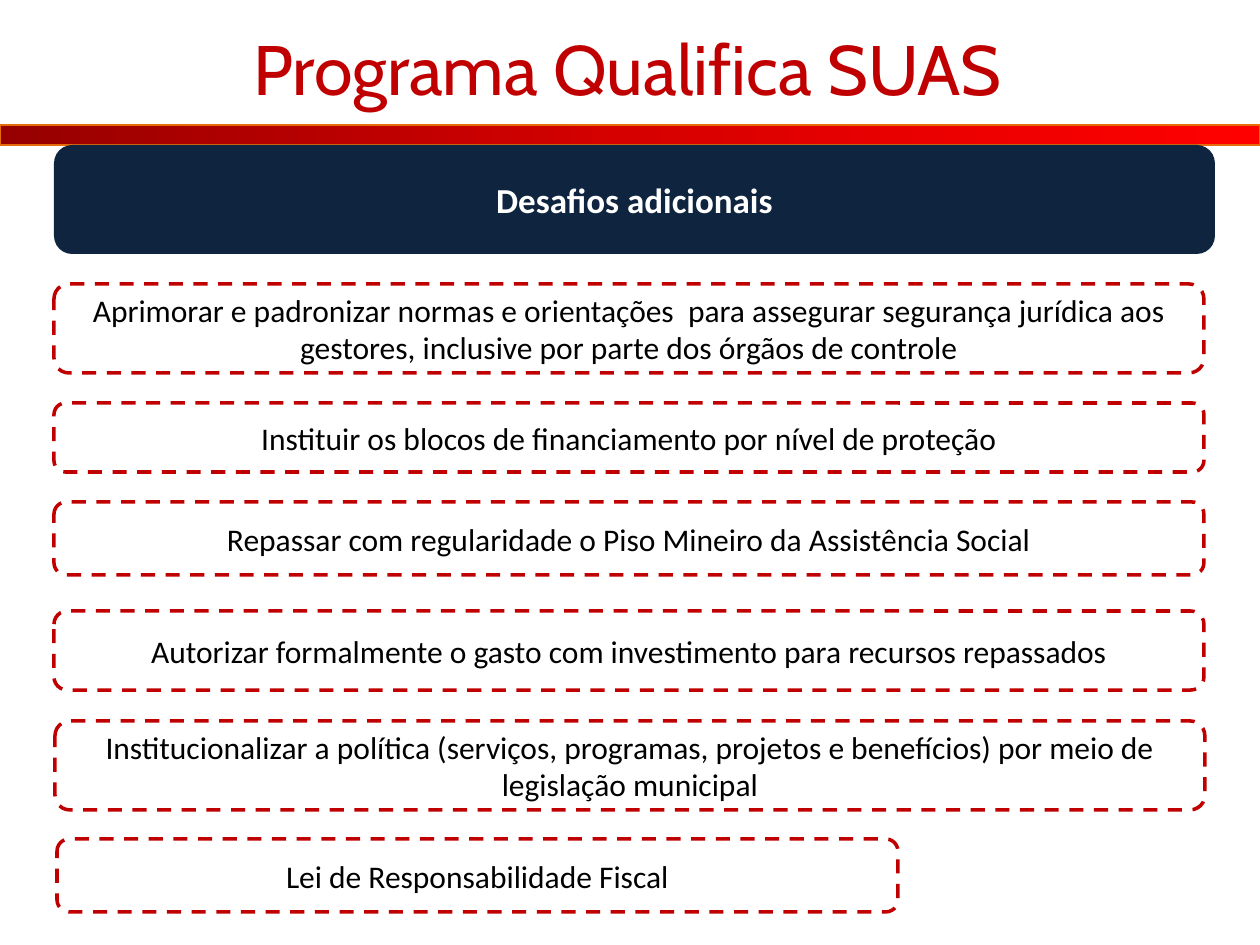
from copy import deepcopy
from pptx import Presentation
from pptx.dml.color import RGBColor
from pptx.enum.dml import MSO_LINE
from pptx.enum.shapes import MSO_SHAPE
from pptx.enum.text import MSO_ANCHOR, PP_ALIGN
from pptx.util import Pt

PX = 914400 // 126
HEX = {
    "red": "C00000", "navy": "0F243E", "white": "FFFFFF", "black": "000000",
    "orange": "E46C0A", "dark": "970000", "mid": "D70000", "bright": "FF0000",
}
TITLE = "Programa Qualifica SUAS"
HEAD = "Desafios adicionais"
GOALS = [
    ("Aprimorar e padronizar normas e orientações  para assegurar segurança "
     "jurídica aos gestores, inclusive por parte dos órgãos de controle",
     (54, 284, 1150, 89)),
    ("Instituir os blocos de financiamento por nível de proteção",
     (54, 403, 1150, 69)),
    ("Repassar com regularidade o Piso Mineiro da Assistência Social",
     (54, 502, 1150, 73)),
    ("Autorizar formalmente o gasto com investimento para recursos repassados",
     (54, 611, 1150, 79)),
    ("Institucionalizar a política (serviços, programas, projetos e benefícios) "
     "por meio de legislação municipal",
     (55, 721, 1150, 89)),
    ("Lei de Responsabilidade Fiscal", (57, 839, 841, 73)),
]


def rgb(name):
    return RGBColor.from_string(HEX[name])


def write(shape, text, size, font, color, bold=False):
    frame = shape.text_frame
    frame.word_wrap = True
    frame.vertical_anchor = MSO_ANCHOR.MIDDLE
    para = frame.paragraphs[0]
    para.alignment = PP_ALIGN.CENTER
    run = para.add_run()
    run.text = text
    run.font.size = Pt(size)
    run.font.name = font
    run.font.bold = bold
    run.font.color.rgb = rgb(color)


def draw(slide, kind, box):
    shape = slide.shapes.add_shape(kind, *(n * PX for n in box))
    shape.shadow.inherit = False
    return shape


def band(slide):
    bar = draw(slide, MSO_SHAPE.RECTANGLE, (0, 125, 1260, 20))
    bar.line.color.rgb = rgb("orange")
    bar.line.width = Pt(1)
    fill = bar.fill
    fill.gradient()
    fill.gradient_angle = 0
    first = bar.element.spPr.gradFill.gsLst[0]
    first.addnext(deepcopy(first))
    for stop, name, place in zip(fill.gradient_stops,
                                 ("dark", "mid", "bright"), (0, 0.5, 1)):
        stop.color.rgb = rgb(name)
        stop.position = place


def main():
    deck = Presentation()
    deck.slide_width, deck.slide_height = 1260 * PX, 945 * PX
    slide = deck.slides.add_slide(deck.slide_layouts[5])
    band(slide)

    title = slide.shapes.title
    title.left, title.top, title.width, title.height = (
        n * PX for n in (0, -34, 1255, 203))
    write(title, TITLE, 40, "Cabin", "red")

    head = draw(slide, MSO_SHAPE.ROUNDED_RECTANGLE, (54, 145, 1161, 109))
    head.fill.solid()
    head.fill.fore_color.rgb = rgb("navy")
    head.line.fill.background()
    write(head, HEAD, 20, "Calibri", "white", True)

    for text, box in GOALS:
        goal = draw(slide, MSO_SHAPE.ROUNDED_RECTANGLE, box)
        goal.fill.background()
        goal.line.color.rgb = rgb("red")
        goal.line.width = Pt(2)
        goal.line.dash_style = MSO_LINE.DASH
        write(goal, text, 18, "Calibri", "black")

    deck.save("out.pptx")


if __name__ == "__main__":
    main()
